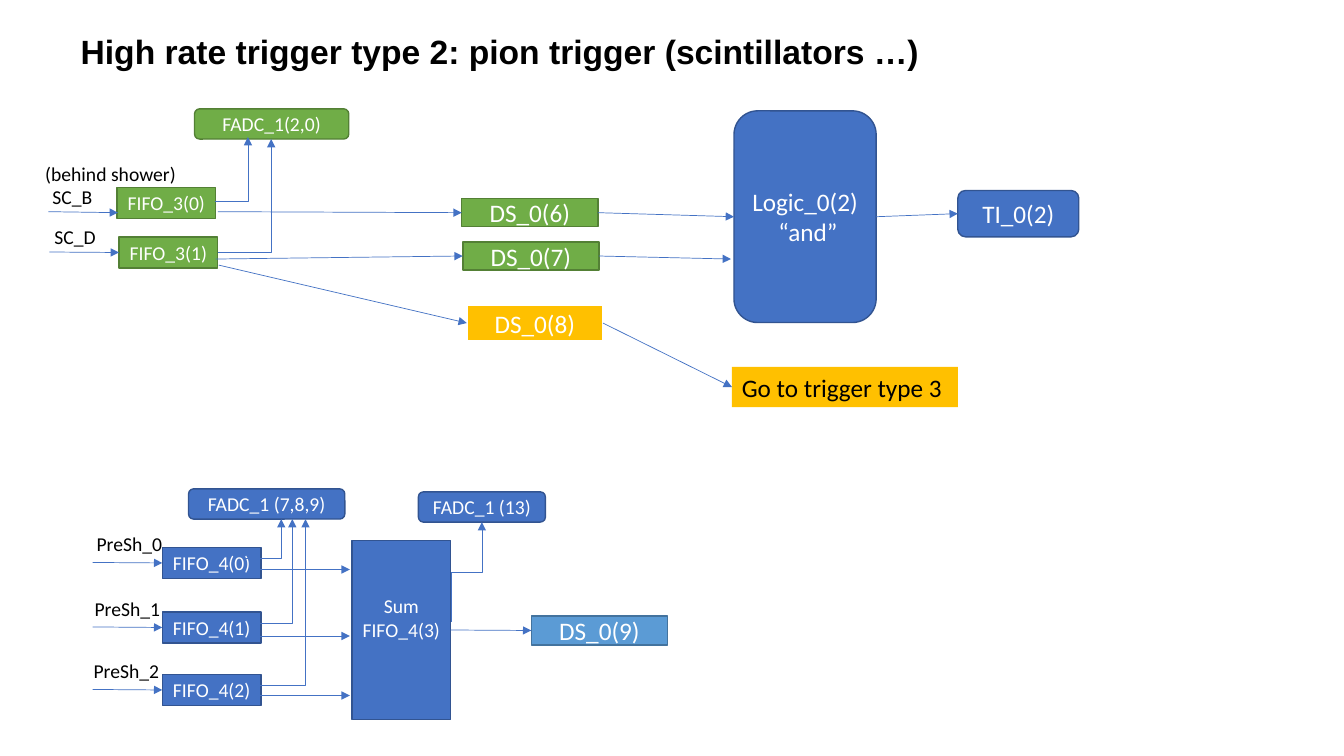
from lxml import etree
from pptx import Presentation
from pptx.dml.color import RGBColor
from pptx.enum.shapes import MSO_CONNECTOR, MSO_SHAPE
from pptx.enum.text import MSO_ANCHOR, MSO_AUTO_SIZE, PP_ALIGN
from pptx.oxml.ns import qn
from pptx.util import Inches, Pt

RECTANGLE = MSO_SHAPE.RECTANGLE
ROUNDED = MSO_SHAPE.ROUNDED_RECTANGLE
STRAIGHT = MSO_CONNECTOR.STRAIGHT
ELBOW = MSO_CONNECTOR.ELBOW
MIDDLE = MSO_ANCHOR.MIDDLE
TOP = MSO_ANCHOR.TOP
LEFT = PP_ALIGN.LEFT
CENTER = PP_ALIGN.CENTER
NO_AUTOFIT = MSO_AUTO_SIZE.NONE
LEFT_SIDE, RIGHT_SIDE = 1, 3

BLACK = RGBColor(0x00, 0x00, 0x00)
WHITE = RGBColor(0xFF, 0xFF, 0xFF)
BLUE = RGBColor(0x44, 0x72, 0xC4)
NAVY = RGBColor(0x32, 0x54, 0x91)
GREEN = RGBColor(0x70, 0xAD, 0x47)
FOREST = RGBColor(0x53, 0x80, 0x35)
SKY = RGBColor(0x5B, 0x9B, 0xD5)
STEEL = RGBColor(0x43, 0x73, 0x9E)
AMBER = RGBColor(0xFF, 0xC0, 0x00)
OUTLINES = {BLUE: NAVY, GREEN: FOREST, SKY: STEEL, AMBER: WHITE}

CELL = 0.1
SMALL, LARGE = 14, 18


class TriggerDiagram:
    def __init__(self, slide, font="Calibri"):
        self.slide = slide
        self.font = font

    def grid(self, *cells):
        return [Inches(cell * CELL) for cell in cells]

    def set_text(self, text_frame, text, size, color, align, font=None, bold=False):
        text_frame.text = text
        for paragraph in text_frame.paragraphs:
            paragraph.alignment = align
            for run in paragraph.runs:
                run.font.name = font or self.font
                run.font.size = Pt(size)
                run.font.bold = bold
                run.font.color.rgb = color

    def title(self, text, *area):
        title = self.slide.shapes.title
        title.left, title.top, title.width, title.height = self.grid(*area)
        text_frame = title.text_frame
        text_frame.auto_size = NO_AUTOFIT
        text_frame.vertical_anchor = TOP
        text_frame.margin_left = text_frame.margin_right = Inches(0.09)
        text_frame.margin_top = text_frame.margin_bottom = Inches(0.04)
        self.set_text(text_frame, text, 24, BLACK, LEFT, "Arial", True)

    def label(self, text, *area, size=SMALL, wrap=True, fill=None):
        shape = self.slide.shapes.add_textbox(*self.grid(*area))
        shape.text_frame.word_wrap = wrap
        if fill:
            shape.fill.solid()
            shape.fill.fore_color.rgb = fill
        self.set_text(shape.text_frame, text, size, BLACK, LEFT)
        return shape

    def box(self, text, *area, fill=BLUE, size=SMALL, preset=RECTANGLE, line=1):
        shape = self.slide.shapes.add_shape(preset, *self.grid(*area))
        shape.shadow.inherit = False
        shape.fill.solid()
        shape.fill.fore_color.rgb = fill
        shape.line.color.rgb = OUTLINES[fill]
        shape.line.width = Pt(line)
        shape.text_frame.word_wrap = False
        shape.text_frame.vertical_anchor = MIDDLE
        self.set_text(shape.text_frame, text, size, WHITE, CENTER)
        return shape

    def connector(self, kind, start, end):
        connector = self.slide.shapes.add_connector(kind, *self.grid(*start, *end))
        connector.line.color.rgb = BLUE
        connector.line.width = Pt(0.5)
        properties = connector._element.spPr
        etree.SubElement(properties.find(qn("a:ln")), qn("a:tailEnd"), type="triangle")
        etree.SubElement(properties, qn("a:effectLst"))
        return connector

    def arrow(self, start, end):
        points = [point if isinstance(point, tuple) else (0, 0) for point in (start, end)]
        connector = self.connector(STRAIGHT, *points)
        if not isinstance(start, tuple):
            connector.begin_connect(start, RIGHT_SIDE)
        if not isinstance(end, tuple):
            connector.end_connect(end, LEFT_SIDE)

    def corner(self, start, end):
        connector = self.connector(ELBOW, start, end)
        connector._element.spPr.find(qn("a:prstGeom")).set("prst", "bentConnector2")

    def upright_step(self, start, end):
        middle_x, middle_y = (start[0] + end[0]) / 2, (start[1] + end[1]) / 2
        half_x, half_y = (end[0] - start[0]) / 2, (start[1] - end[1]) / 2
        connector = self.connector(
            ELBOW,
            (middle_x + half_y, middle_y + half_x),
            (middle_x - half_y, middle_y - half_x),
        )
        connector._element.spPr.find(qn("a:xfrm")).set("rot", "5400000")


def draw_pion_trigger(diagram):
    logic = diagram.box("Logic_0(2)\n “and”", 72.8, 11, 14.1, 21, size=LARGE, preset=ROUNDED)
    trigger_input = diagram.box("TI_0(2)", 95, 18.9, 12, 4.6, size=LARGE, preset=ROUNDED)
    diagram.box("FADC_1(2,0)", 19.3, 10.8, 15.3, 3, fill=GREEN, preset=ROUNDED)
    diagram.box("FIFO_3(0)", 11.6, 18.6, 9.8, 3.1, fill=GREEN)
    fifo_d = diagram.box("FIFO_3(1)", 11.8, 23.5, 9.8, 3.1, fill=GREEN)
    delay_6 = diagram.box("DS_0(6)", 45.8, 19.7, 13.5, 2.8, fill=GREEN, size=LARGE)
    delay_7 = diagram.box("DS_0(7)", 45.9, 24, 13.5, 2.8, fill=GREEN, size=LARGE)
    delay_8 = diagram.box("DS_0(8)", 46.3, 30.3, 13.5, 3.5, fill=AMBER, size=LARGE, line=1.5)
    next_type = diagram.label("Go to trigger type 3", 72.6, 36.4, 22.4, 4, size=LARGE, fill=AMBER)
    diagram.label("(behind shower)", 3.5, 15.6, 15.7, 3.4)
    diagram.label("SC_B", 4.2, 17.9, 6.2, 3.4, wrap=False)
    diagram.label("SC_D", 4.4, 21.8, 7.8, 3.4)
    for start, end in [
        ((4.8, 21), (11.7, 21.1)),
        ((4.9, 25), fifo_d),
        ((21.6, 21), delay_6),
        ((21.4, 25.7), delay_7),
        ((21.7, 26.3), delay_8),
        (delay_6, logic),
        (delay_7, (72.5, 25.7)),
        (delay_8, next_type),
        (logic, trigger_input),
    ]:
        diagram.arrow(start, end)
    diagram.corner((21.3, 20), (24.6, 13.6))
    diagram.corner((21.6, 25), (26.9, 13.8))


def draw_preshower_sum(diagram):
    total = diagram.box("Sum\nFIFO_4(3)", 34.9, 53.6, 9.8, 17.8)
    total.text_frame.margin_bottom = Inches(0.29)
    diagram.box("FADC_1 (7,8,9)", 18.7, 48.5, 15.5, 3, preset=ROUNDED)
    diagram.box("FADC_1 (13)", 41.5, 48.8, 12.6, 3, preset=ROUNDED)
    delay_9 = diagram.box("DS_0(9)", 52.7, 61.1, 13.5, 2.9, fill=SKY, size=LARGE)
    channels = [
        (54.3, 8.6, 24.2, 27.9, 56.5),
        (60.7, 8.4, 25.3, 29, 63.1),
        (66.9, 8.3, 25.1, 30.3, 69),
    ]
    for channel, (top, label_left, tap_start, tap_end, sum_row) in enumerate(channels):
        fifo = diagram.box(f"FIFO_4({channel})", 16.1, top, 9.8, 3.1)
        diagram.label(f"PreSh_{channel}", label_left, top - 2, 8.6, 3.4, wrap=False)
        diagram.arrow((9.2, top + 1.5), fifo)
        diagram.corner((tap_start, top + 1.1), (tap_end, 51.5))
        diagram.arrow((24.9, sum_row), (34.7, sum_row))
    diagram.arrow(total, delay_9)
    diagram.upright_step((44.8, 61.7), (47.8, 51.8))


def main():
    presentation = Presentation()
    presentation.slide_width = Inches(13.33)
    presentation.slide_height = Inches(7.5)
    slide = presentation.slides.add_slide(presentation.slide_layouts[5])
    diagram = TriggerDiagram(slide)
    diagram.title("High rate trigger type 2: pion trigger (scintillators …)", 7.1, 2.7, 121.6, 4.6)
    draw_pion_trigger(diagram)
    draw_preshower_sum(diagram)
    presentation.save("out.pptx")


if __name__ == "__main__":
    main()
